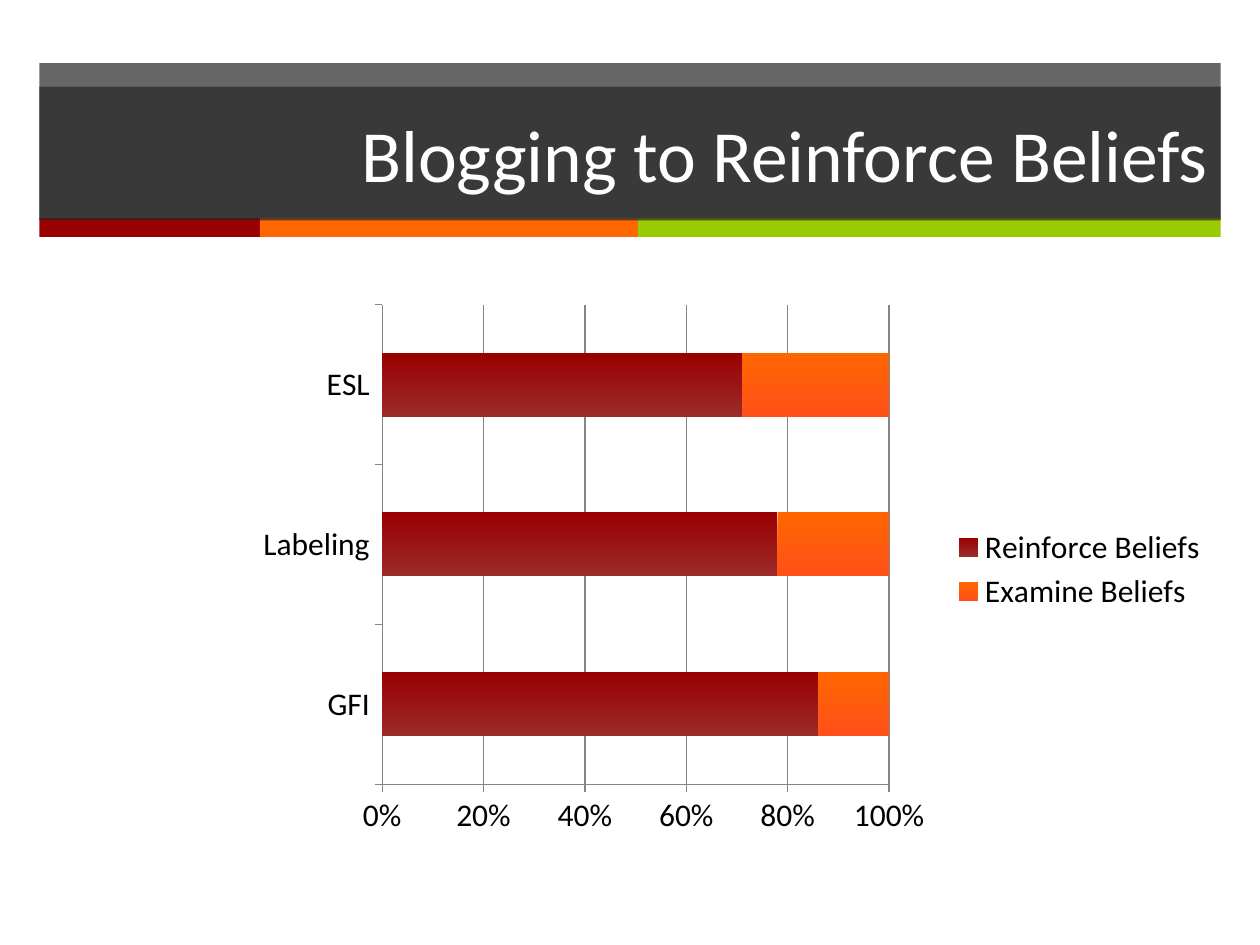
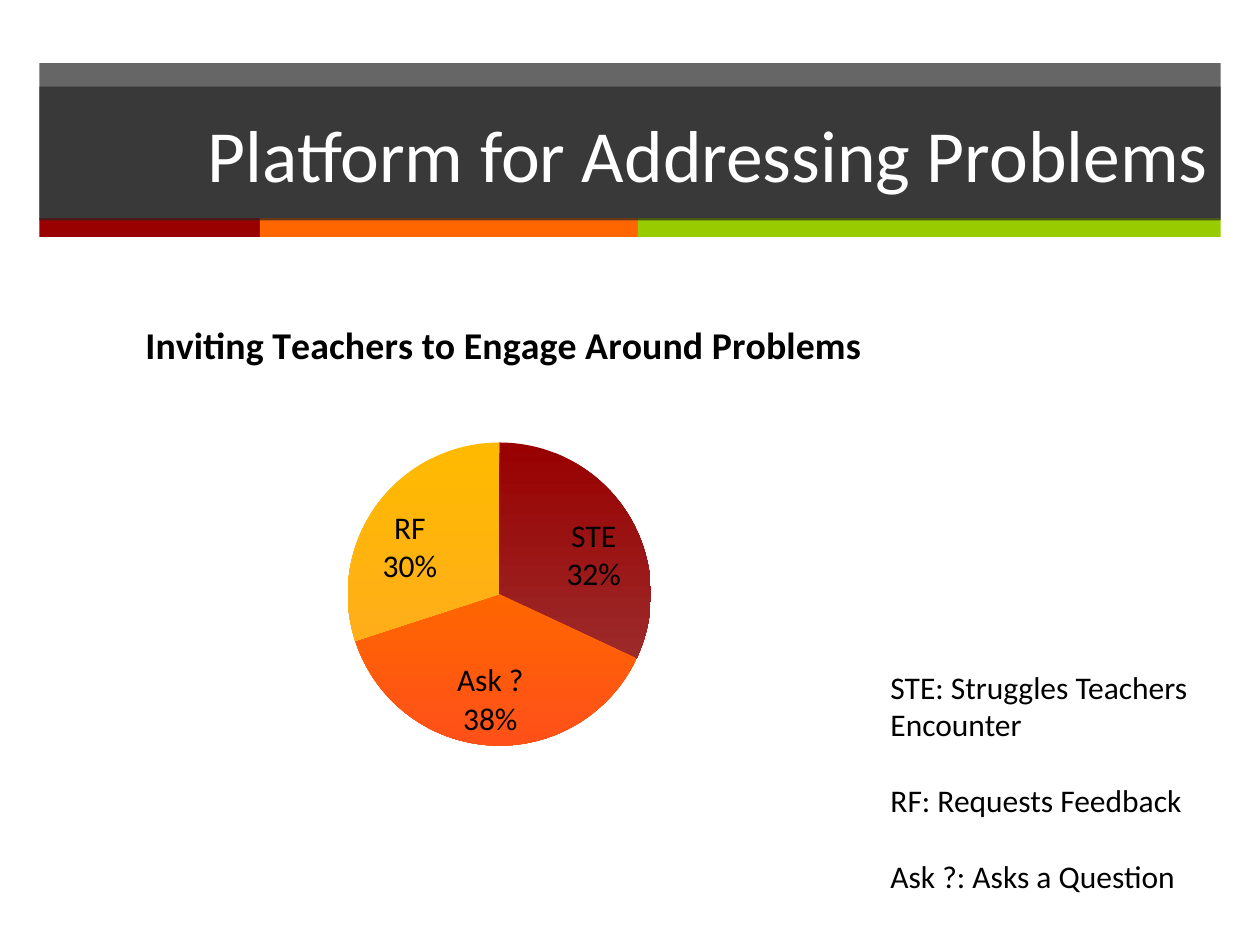
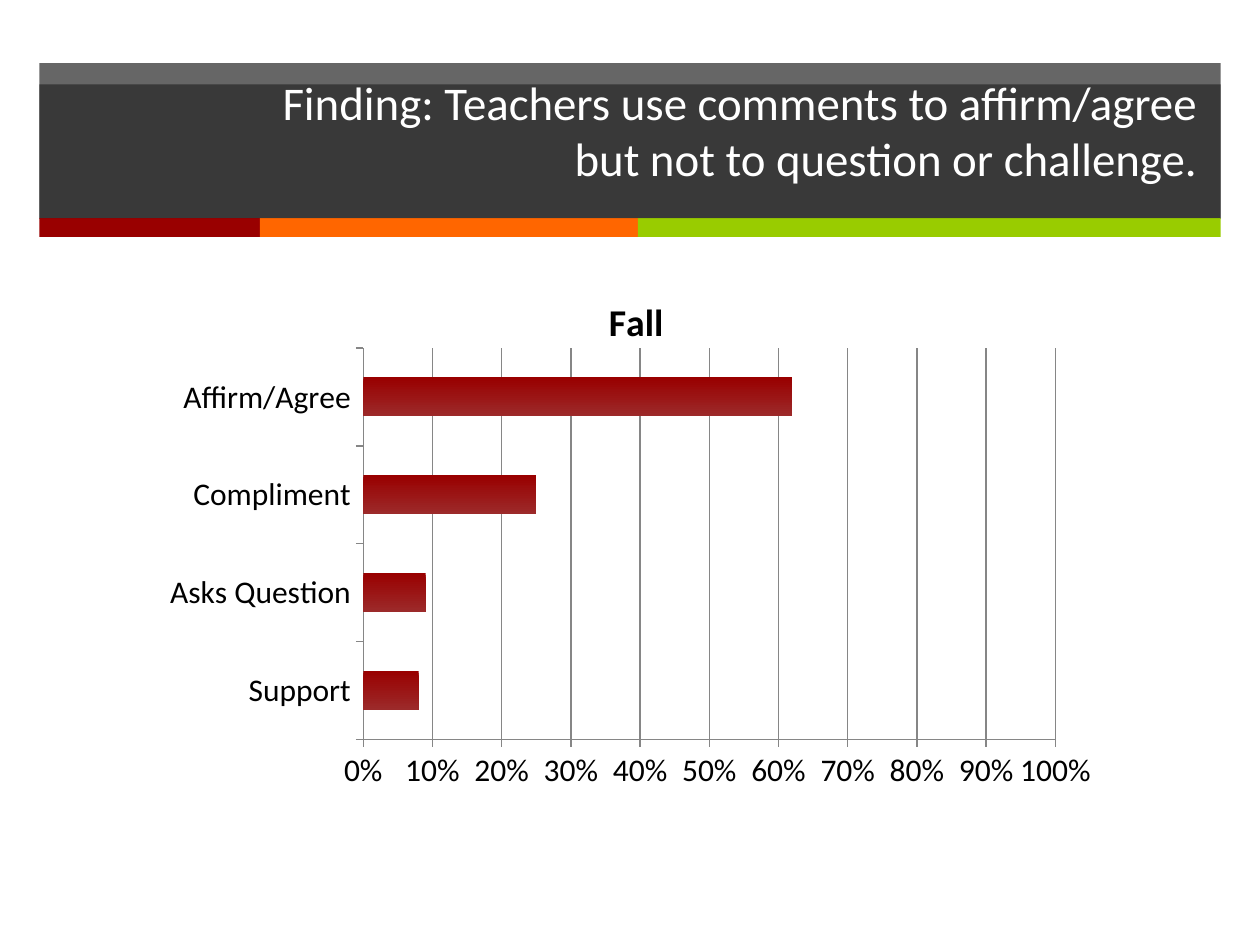
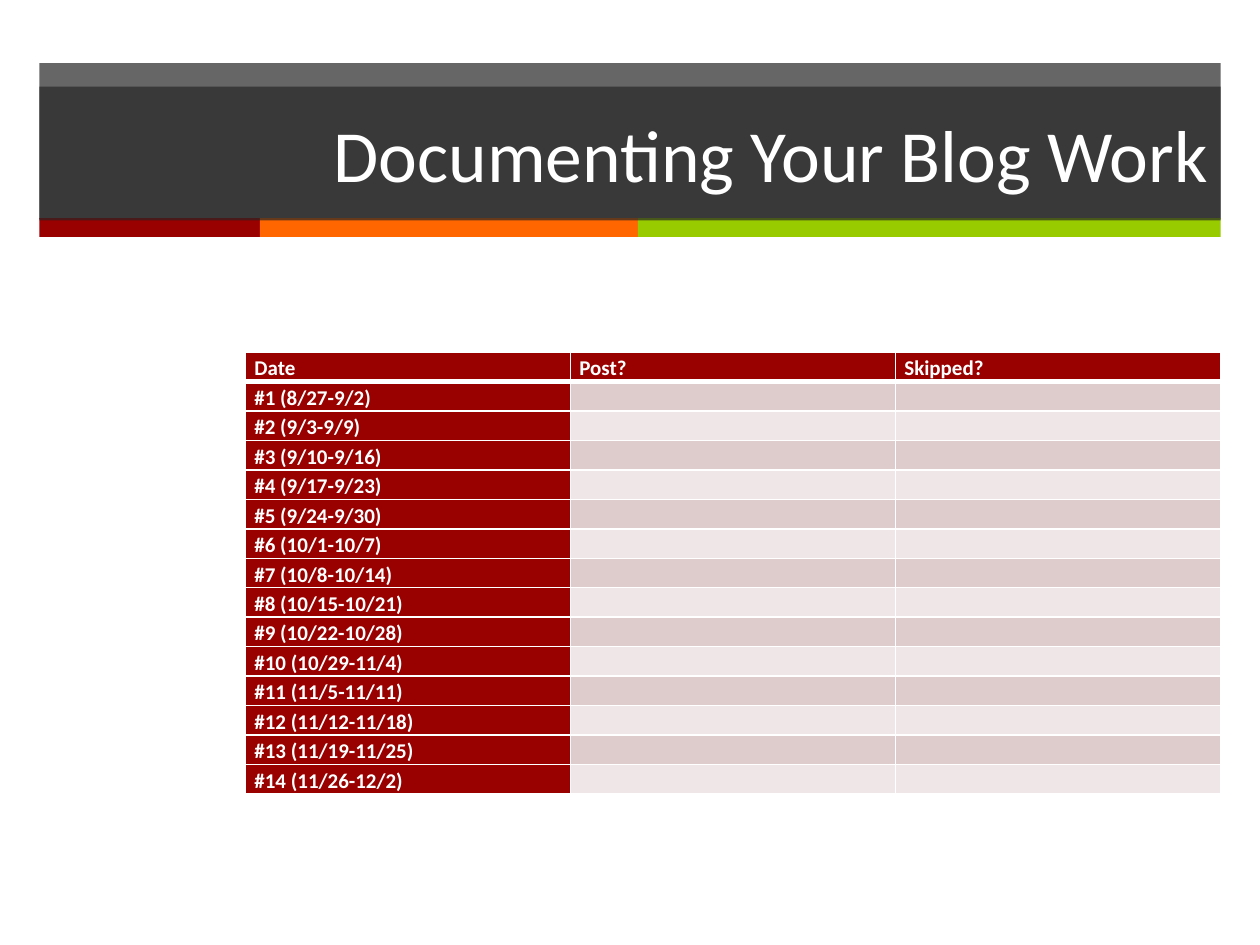
import pptx
import pptx.util
import pptx.chart.data
import pptx.dml.color
import pptx.enum.chart
import pptx.enum.shapes
import pptx.enum.text
import pptx.oxml.ns
from lxml import etree

Pt = pptx.util.Pt
RGB = pptx.dml.color.RGBColor.from_string
qn = pptx.oxml.ns.qn
Kind = pptx.enum.chart.XL_CHART_TYPE
Align = pptx.enum.text.PP_ALIGN
RECT = pptx.enum.shapes.MSO_SHAPE.RECTANGLE

FONT = "Calibri"
INK = {
    "white": "FFFFFF", "black": "000000", "dark": "262626", "line": "868686",
    "red": "990000", "orange": "FF6600", "gold": "FFBA00", "green": "99CC00",
    "odd": "DECCCC", "even": "EFE7E7",
}
FADE = {"red": "9C2A2A", "orange": "FF5019", "gold": "FFAE19"}

deck = pptx.Presentation()
deck.slide_width = pptx.util.Inches(10)
deck.slide_height = pptx.util.Inches(7.5)
COL = deck.slide_width / 160
ROW = deck.slide_height / 120
EDGE, SPAN = 5, 150


def place(left, top, width, height):
    return int(left * COL), int(top * ROW), int(width * COL), int(height * ROW)


def write(frame, text, size=18, color="black", bold=False, align=Align.LEFT, gap=0, lead=None):
    frame.text = text
    for i, para in enumerate(frame.paragraphs):
        para.alignment = align
        para.line_spacing = lead
        para.space_before = Pt(gap if i else 0)
        for run in para.runs:
            run.font.name = FONT
            run.font.size = Pt(size)
            run.font.bold = bold
            run.font.color.rgb = RGB(INK[color])
        if not text:
            etree.SubElement(para._p, qn("a:endParaRPr"), sz=str(size * 100))


heads = [
    ("Blogging to Reinforce Beliefs", 42, 11),
    ("Platform for Addressing Problems", 42, 11),
    ("Finding: Teachers use comments to affirm/agree\nbut not to question or challenge.", 26.8, 10.7),
    ("Documenting Your Blog Work", 42, 11),
]
plan = deck.slide_layouts[5]
for hold in list(plan.placeholders)[1:]:
    hold.element.getparent().remove(hold.element)
pages = [deck.slides.add_slide(plan) for head in heads]

band = pages[0].shapes.add_shape(RECT, *place(EDGE, 8, SPAN, 19.8))
band.shadow.inherit = False
band.line.fill.background()
strip = pages[0].shapes.add_group_shape()
left = EDGE
for hue, width in (("red", 28), ("orange", 48), ("green", 74)):
    part = strip.shapes.add_shape(RECT, *place(left, 27.7, width, 2.4))
    part.shadow.inherit = False
    part.fill.solid()
    part.fill.fore_color.rgb = RGB(INK[hue])
    part.line.fill.background()
    left += width
for spot, item in enumerate((band, strip), 2):
    plan.shapes.element.insert(spot, item.element)

for page, (text, size, top) in zip(pages, heads):
    title = page.shapes.title
    title.left, title.top, title.width, title.height = place(EDGE, top, SPAN, 17)
    frame = title.text_frame
    frame.word_wrap = True
    frame.auto_size = pptx.enum.text.MSO_AUTO_SIZE.NONE
    frame.vertical_anchor = pptx.enum.text.MSO_ANCHOR.MIDDLE
    write(frame, text, size=size, color="white", align=Align.RIGHT)
    if "\n" in text:
        frame.margin_right = int(3 * COL)
        frame.margin_bottom = int(6.2 * ROW)

for pane in [band] + [page.shapes.title for page in pages]:
    pane.fill.solid()
    pane.fill.fore_color.rgb = RGB(INK["dark"])
    shade = pane.element.spPr.find(".//" + qn("a:srgbClr"))
    etree.SubElement(shade, qn("a:alpha"), val="70000")

invite = "Inviting Teachers to Engage Around Problems"
charts = [
    (Kind.BAR_STACKED_100, (31.2, 37.3, 123.8, 70), (0.14, 0.02, 0.52, 0.87), None,
     ["GFI", "Labeling", "ESL"],
     [("Reinforce Beliefs", [86, 78, 71]), ("Examine Beliefs", [14, 22, 29])]),
    (Kind.PIE, (EDGE, 37.3, 118, 70), (0.33, 0.27, 0.33, 0.55), invite,
     ["STE", "Ask ?", "RF"], [(invite, [32, 38, 30])]),
    (Kind.BAR_CLUSTERED, (18.9, 34.4, 123.8, 70), (0.22, 0.14, 0.71, 0.71), "Fall",
     ["Support", "Asks Question", "Compliment", "Affirm/Agree"],
     [("Series 1", [0.08, 0.09, 0.25, 0.62])]),
]
for page, (kind, area, inner, name, cats, rows) in zip(pages, charts):
    data = pptx.chart.data.CategoryChartData()
    data.categories = cats
    for label, vals in rows:
        data.add_series(label, vals)
    chart = page.shapes.add_chart(kind, *place(*area), data).chart
    chart.font.name = FONT
    chart.font.size = Pt(18)
    chart.font.color.rgb = RGB(INK["black"])
    chart.has_legend = len(rows) > 1
    chart.has_title = bool(name)
    if name:
        write(chart.chart_title.text_frame, name, size=21.6, bold=True, align=Align.CENTER)
    if chart.has_legend:
        chart.legend.position = pptx.enum.chart.XL_LEGEND_POSITION.RIGHT
        chart.legend.include_in_layout = False

    plot = chart.plots[0]
    plot.vary_by_categories = kind == Kind.PIE
    if kind == Kind.PIE:
        marks = [plot.series[0].points[i] for i in range(len(cats))]
        labels = plot.series[0].data_labels
        labels.show_value = False
        labels.show_category_name = True
        labels.show_percentage = True
        labels.position = pptx.enum.chart.XL_LABEL_POSITION.INSIDE_END
        split = etree.Element(qn("c:separator"))
        split.text = "\n"
        chart.element.find(".//" + qn("c:showBubbleSize")).addnext(split)
    else:
        marks = plot.series
        plot.gap_width = 150
        plot.overlap = 100 if len(rows) > 1 else 0
        for axis in (chart.category_axis, chart.value_axis):
            axis.major_tick_mark = pptx.enum.chart.XL_TICK_MARK.OUTSIDE
            axis.format.line.color.rgb = RGB(INK["line"])
        axis.has_major_gridlines = True
        axis.major_gridlines.format.line.color.rgb = RGB(INK["line"])
        axis.tick_labels.number_format = "0%"
        axis.tick_labels.number_format_is_linked = False
        if kind == Kind.BAR_CLUSTERED:
            axis.minimum_scale, axis.maximum_scale, axis.major_unit = 0, 1, 0.1

    for mark, hue in zip(marks, FADE):
        fill = mark.format.fill
        fill.gradient()
        fill.gradient_angle = 270
        for stop, tone in zip(fill.gradient_stops, (INK[hue], FADE[hue])):
            stop.color.rgb = RGB(tone)

    field = chart.element.find(".//" + qn("c:plotArea"))
    for old in field.findall(qn("c:layout")):
        field.remove(old)
    frame = etree.Element(qn("c:layout"))
    field.insert(0, frame)
    frame = etree.SubElement(frame, qn("c:manualLayout"))
    pairs = [("layoutTarget", "inner"), ("xMode", "edge"), ("yMode", "edge")]
    for key, val in pairs + list(zip("xywh", inner)):
        etree.SubElement(frame, qn("c:" + key), val=str(val))

note = pages[1].shapes.add_textbox(*place(111.5, 84, 43.5, 30.7)).text_frame
note.word_wrap = True
note.auto_size = pptx.enum.text.MSO_AUTO_SIZE.SHAPE_TO_FIT_TEXT
write(note, "STE: Struggles Teachers Encounter\nRF: Requests Feedback\nAsk ?: Asks a Question", gap=21.6)

weeks = [
    "8/27-9/2", "9/3-9/9", "9/10-9/16", "9/17-9/23", "9/24-9/30", "10/1-10/7", "10/8-10/14",
    "10/15-10/21", "10/22-10/28", "10/29-11/4", "11/5-11/11", "11/12-11/18", "11/19-11/25", "11/26-12/2",
]
lines = [("Date", "Post?", "Skipped?")]
lines += [(f"#{i} ({week})", "", "") for i, week in enumerate(weeks, 1)]
table = pages[3].shapes.add_table(len(lines), 3, *place(31.2, 44.7, 123.8, 55.2)).table
table.first_col = True
for r, line in enumerate(lines):
    for c, text in enumerate(line):
        cell = table.cell(r, c)
        cell.margin_left = cell.margin_right = Pt(5)
        cell.margin_top = cell.margin_bottom = 0
        write(cell.text_frame, text, size=12, color="white", bold=True, lead=1.15)
        props = cell._tc.get_or_add_tcPr()
        for side in "LRTB":
            wide = 3 if (r, side) in ((0, "B"), (1, "T")) else 1
            rule = etree.SubElement(props, qn("a:ln" + side), w=str(Pt(wide)))
            paint = etree.SubElement(rule, qn("a:solidFill"))
            etree.SubElement(paint, qn("a:srgbClr"), val=INK["white"])
        hue = "red" if r == 0 or c == 0 else "odd" if r % 2 else "even"
        cell.fill.solid()
        cell.fill.fore_color.rgb = RGB(INK[hue])

deck.save("out.pptx")
